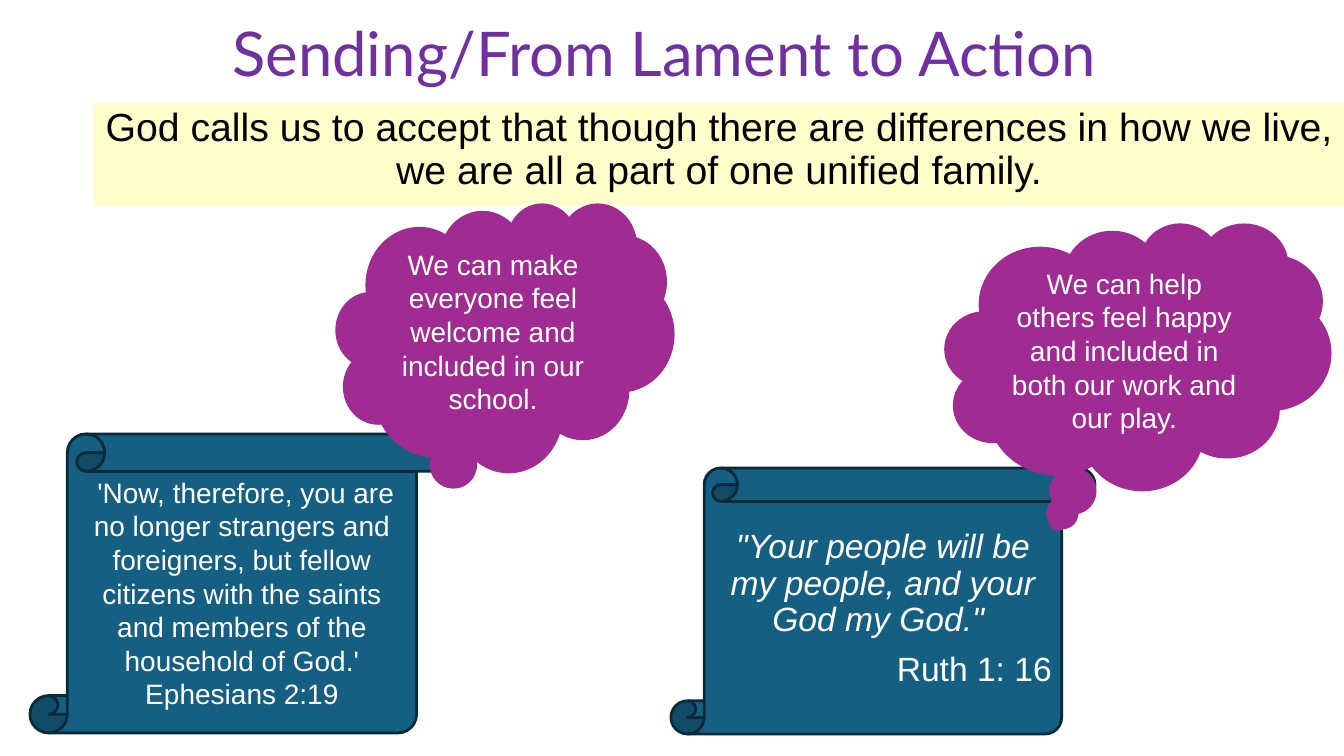
"""Build the "Sending/From Lament to Action" slide."""
import pptx
import pptx.dml.color
import pptx.enum.shapes
import pptx.enum.text
import pptx.util

RGBColor = pptx.dml.color.RGBColor
SHAPE = pptx.enum.shapes.MSO_SHAPE
ALIGN = pptx.enum.text.PP_ALIGN
ANCHOR = pptx.enum.text.MSO_ANCHOR

PURPLE = RGBColor(0x70, 0x30, 0xA0)
CREAM = RGBColor(0xFF, 0xFF, 0xCC)
BLACK = RGBColor(0, 0, 0)
WHITE = RGBColor(0xFF, 0xFF, 0xFF)
BLUE = RGBColor(0x15, 0x60, 0x82)
NAVY = RGBColor(0x09, 0x2A, 0x39)
MAGENTA = RGBColor(0xA0, 0x2B, 0x93)

PX = 914400 / 100.8
SLIDE = (1344, 756)

TITLE_BOX = (93, 10, 1159, 94)
TITLE = "Sending/From Lament to Action "
BANNER_BOX = (93, 103, 1252, 102)
BANNER = ("God calls us to accept that though there are differences in how we live, "
          "we are all a part of one unified family.")

SCROLLS = [
    {"box": (30, 434, 424, 299), "size": 20, "spacing": 1.0, "paragraphs": [
        (" 'Now, therefore, you are no longer strangers and foreigners, but fellow "
         "citizens with the saints and members of the household of God.'",
         ALIGN.CENTER, False, 0),
        ("Ephesians 2:19", ALIGN.CENTER, False, 0)]},
    {"box": (671, 468, 424, 266), "size": 24, "spacing": 0.9, "paragraphs": [
        ('"Your people will be my people, and your God my God." ',
         ALIGN.CENTER, True, 0),
        ("Ruth 1: 16", ALIGN.RIGHT, False, 10)]},
]
CLOUDS = [
    {"box": (337, 204, 336, 267), "tail": (-0.138, 0.429),
     "text": "We can make everyone feel welcome and included in our school."},
    {"box": (946, 224, 384, 265), "tail": (-0.208, 0.625),
     "text": "We can help others feel happy and included in both our work and our play."},
]


def emu(box):
    return [pptx.util.Emu(round(v * PX)) for v in box]


def add_shape(slide, kind, box, fill, line=None):
    sp = slide.shapes.add_shape(kind, *emu(box))
    sp.shadow.inherit = False
    sp.fill.solid()
    sp.fill.fore_color.rgb = fill
    if line is None:
        sp.line.fill.background()
    else:
        sp.line.color.rgb = line
        sp.line.width = pptx.util.Pt(2)
    return sp


def write(sp, paragraphs, size, color, spacing=1.0, font="Arial", anchor=ANCHOR.MIDDLE):
    tf = sp.text_frame
    tf.word_wrap = True
    tf.vertical_anchor = anchor
    for i, (text, align, italic, before) in enumerate(paragraphs):
        p = tf.add_paragraph() if i else tf.paragraphs[0]
        p.alignment = align
        p.line_spacing = spacing
        if before:
            p.space_before = pptx.util.Pt(before)
        r = p.add_run()
        r.text = text
        r.font.name = font
        r.font.size = pptx.util.Pt(size)
        r.font.italic = italic
        r.font.color.rgb = color


def main():
    prs = pptx.Presentation()
    prs.slide_width, prs.slide_height = emu(SLIDE)
    slide = prs.slides.add_slide(prs.slide_layouts[6])

    title = slide.shapes.add_textbox(*emu(TITLE_BOX))
    write(title, [(TITLE, ALIGN.CENTER, False, 0)], 44, PURPLE, 0.9, "Lato")

    banner = add_shape(slide, SHAPE.RECTANGLE, BANNER_BOX, CREAM)
    write(banner, [(BANNER, ALIGN.CENTER, False, 0)], 28, BLACK, 0.9, anchor=ANCHOR.TOP)

    for scroll in SCROLLS:
        sp = add_shape(slide, SHAPE.VERTICAL_SCROLL, scroll["box"], BLUE, NAVY)
        write(sp, scroll["paragraphs"], scroll["size"], WHITE, scroll["spacing"])

    for cloud in CLOUDS:
        sp = add_shape(slide, SHAPE.CLOUD_CALLOUT, cloud["box"], MAGENTA, MAGENTA)
        for i, value in enumerate(cloud["tail"]):
            sp.adjustments[i] = value
        write(sp, [(cloud["text"], ALIGN.CENTER, False, 0)], 20, WHITE)

    prs.save("out.pptx")


if __name__ == "__main__":
    main()
